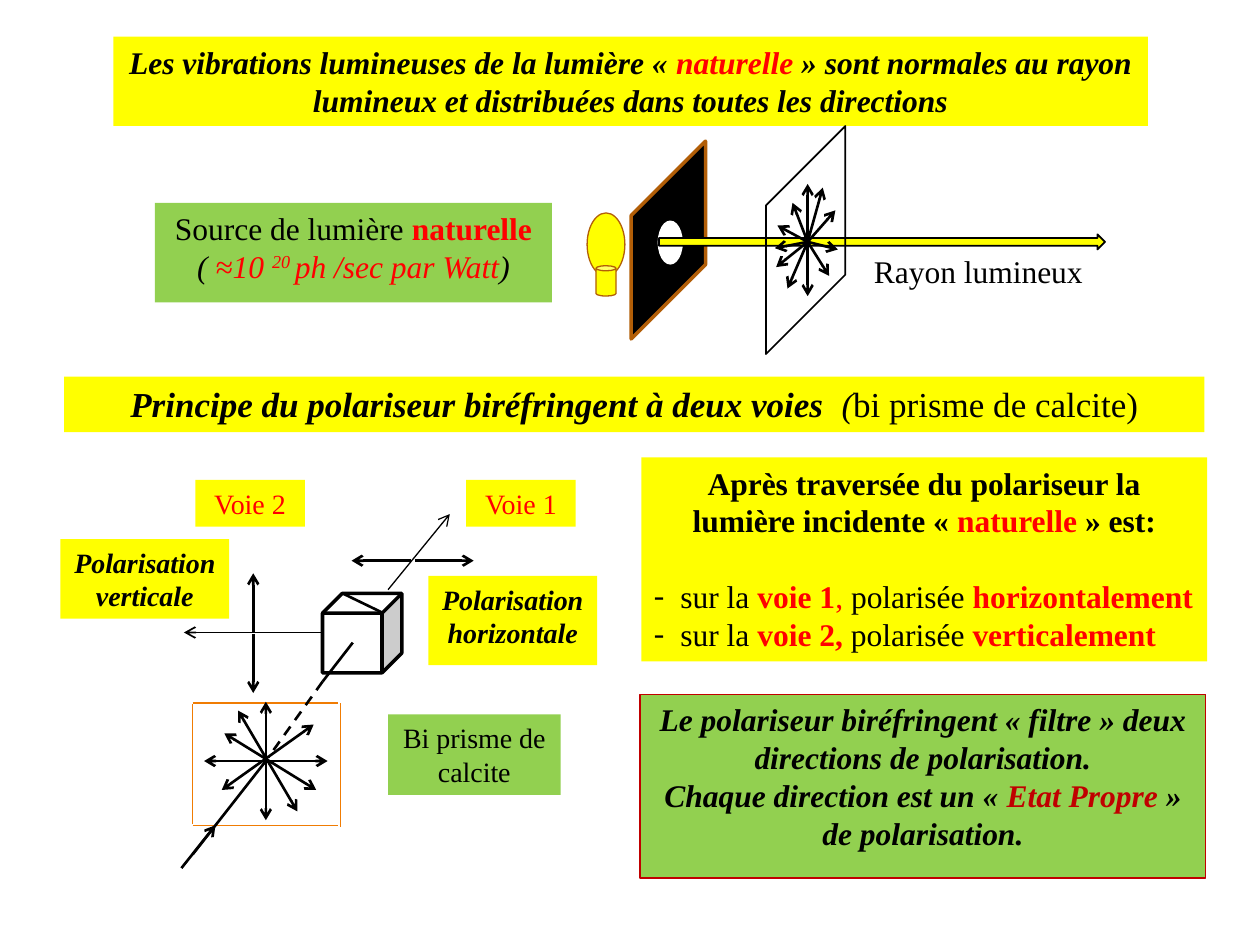
from lxml import etree
from pptx import Presentation
from pptx.dml.color import RGBColor
from pptx.enum import dml, shapes, text
from pptx.oxml import ns
from pptx.util import Inches, Pt

FONT = "Times New Roman"
COLORS = {"black": "000000", "white": "FFFFFF", "yellow": "FFFF00", "green": "92D050",
          "red": "FF0000", "crimson": "C00000", "brown": "B25E07", "orange": "F07C03"}
KIND = shapes.MSO_SHAPE

# Run styles: b bold, i italic, r red, c crimson, s superscript
HEADING = [[("Les vibrations lumineuses de la lumière « ", "bi"), ("naturelle", "bir"),
            (" » sont normales au rayon lumineux et distribuées dans toutes les directions", "bi")]]
RESULT = [[("Après traversée du polariseur la lumière incidente « ", "b"),
           ("naturelle", "br"), (" » est:", "b")]]
CHANNELS = [
    [("sur la ", ""), ("voie 1", "br"), (",", "r"), (" polarisée ", ""), ("horizontalement", "br")],
    [("sur la ", ""), ("voie 2,", "br"), (" polarisée ", ""), ("verticalement", "br")],
]
LABELS = [
    ((6.82, 1.95, 1.89, 0.4), None, None, 18, [[("Rayon lumineux", "")]]),
    ((1.23, 1.61, 3.15, 0.79), "green", None, 18, [
        [("Source de lumière ", ""), ("naturelle", "br")],
        [("( ", "i"), ("≈10 ", "ir"), ("20 ", "irs"), ("ph /sec par Watt", "ir"), (")", "i")]]),
    ((5.08, 5.51, 4.49, 1.46), "green", "crimson", 18, [
        [("Le polariseur biréfringent « filtre » deux directions de polarisation.", "bi")],
        [("Chaque direction est un « ", "bi"), ("Etat Propre", "bic"),
         (" » de polarisation.", "bi")]]),
    ((0.51, 2.99, 9.05, 0.44), "yellow", None, 20, [
        [("Principe du polariseur biréfringent à deux voies  ", "bi"), ("(", "i"),
         ("bi prisme de calcite)", "")]]),
    ((3.7, 3.81, 0.87, 0.37), "yellow", None, 16, [[("Voie 1", "r")]]),
    ((1.55, 3.81, 0.87, 0.37), "yellow", None, 16, [[("Voie 2", "r")]]),
    ((3.4, 4.57, 1.34, 0.71), "yellow", None, 16, [[("Polarisation horizontale", "bi")]]),
    ((0.48, 4.28, 1.34, 0.63), "yellow", None, 16, [[("Polarisation verticale", "bi")]]),
    ((3.08, 5.67, 1.37, 0.64), "green", None, 16, [[("Bi prisme de calcite", "")]]),
]
SCREEN = (4.52, 1.61, 1.57, 0.59)
HOLE = (5.22, 1.75, 0.2, 0.35)
BEAM = (5.23, 1.86, 3.54, 0.12)
WAVE_PLANE = (5.49, 1.59, 1.81, 0.63)
BULB = (4.66, 1.69, 0.3, 0.5)
SOCKET = (4.73, 2.11, 0.16, 0.24)
PRISM = (2.56, 4.71, 0.63, 0.63)

RAY_CENTER = (6.41, 1.92)
RAY_TIPS = [(6.41, 1.46), (6.41, 2.35), (6.53, 1.49), (6.29, 1.61), (6.63, 1.67), (6.16, 2.12),
            (6.58, 2.19), (6.65, 1.98), (6.17, 1.79), (6.25, 2.29), (6.15, 1.97)]
INCIDENT_CENTER = (2.11, 6.04)
INCIDENT_TIPS = [(2.11, 5.57), (1.62, 6.04), (2.6, 6.04), (2.11, 6.51)]
INCIDENT_DIAGONALS = [((1.78, 5.82), (2.51, 6.27)), ((1.76, 6.27), (2.49, 5.75)),
                      ((1.89, 5.64), (2.36, 6.44))]
VERTICAL_VIBRATION = [((2.01, 5.02), (2.01, 4.55)), ((2.01, 5.03), (2.01, 5.5))]
HORIZONTAL_VIBRATION = [((3.26, 4.45), (2.79, 4.45)), ((3.29, 4.45), (3.76, 4.45))]
FRAME_SIDES = [((1.53, 6.55), (2.68, 6.55)), ((1.53, 5.58), (2.68, 5.58)),
               ((1.53, 5.59), (1.53, 6.54)), ((2.7, 5.58), (2.7, 6.56))]
PRISM_DIAGONAL = ((2.72, 4.71), (3.03, 4.86))
INCIDENT_PATH = [((2.8, 5.1), (2.56, 5.41)), ((2.11, 6.04), (1.53, 6.78))]
HIDDEN_PATH = ((2.56, 5.41), (2.13, 6.01))
ENTRY = ((1.44, 6.89), (1.71, 6.55))
CHANNEL_1 = ((3.08, 4.68), (3.57, 4.08))
CHANNEL_2 = ((2.56, 5.02), (1.46, 5.02))


def rgb(name):
    return RGBColor.from_string(COLORS[name])


def paint(item, fill, line=None, width=0.75):
    if fill:
        item.fill.solid()
        item.fill.fore_color.rgb = rgb(fill)
    else:
        item.fill.background()
    if line:
        item.line.color.rgb = rgb(line)
        item.line.width = Pt(width)
    else:
        item.line.fill.background()


def place(item, box):
    item.left, item.top, item.width, item.height = map(Inches, box)


def write(item, paragraphs, size):
    frame = item.text_frame
    frame.word_wrap = True
    frame.auto_size = text.MSO_AUTO_SIZE.NONE
    frame.vertical_anchor = text.MSO_ANCHOR.TOP
    for index, runs in enumerate(paragraphs):
        paragraph = frame.add_paragraph() if index else frame.paragraphs[0]
        paragraph.alignment = text.PP_ALIGN.CENTER
        paragraph.space_before = Pt(0)
        for words, style in runs:
            run = paragraph.add_run()
            run.text = words
            font = run.font
            font.name, font.size = FONT, Pt(size)
            font.bold, font.italic = "b" in style, "i" in style
            font.color.rgb = rgb("red" if "r" in style else "crimson" if "c" in style else "black")
            if "s" in style:
                run._r.get_or_add_rPr().set("baseline", "30000")
    return frame.paragraphs


def set_bullet(paragraph, char, indent):
    properties = paragraph._p.get_or_add_pPr()
    properties.set("marL", str(indent))
    properties.set("indent", str(-indent))
    if char is None:
        etree.SubElement(properties, ns.qn("a:buNone"))
    else:
        etree.SubElement(properties, ns.qn("a:buFont")).set("typeface", FONT)
        etree.SubElement(properties, ns.qn("a:buChar")).set("char", char)


def add_figure(slide, kind, box, fill, line=None, width=0.75):
    figure = slide.shapes.add_shape(kind, *map(Inches, box))
    figure.shadow.inherit = False
    paint(figure, fill, line, width)
    return figure


def add_slanted_plane(slide, box, fill, line, width):
    plane = add_figure(slide, KIND.PARALLELOGRAM, box, fill, line, width)
    plane.adjustments[0] = 1
    plane.rotation = 90
    plane._element.spPr.find(ns.qn("a:xfrm")).set("flipH", "1")


def add_line(slide, ends, width=1.5, color="black", arrows=(), dashed=False):
    start, end = ends
    line = slide.shapes.add_connector(shapes.MSO_CONNECTOR.STRAIGHT, *map(Inches, start + end))
    line.line.color.rgb = rgb(color)
    line.line.width = Pt(width)
    if dashed:
        line.line.dash_style = dml.MSO_LINE.DASH
    for arrow in arrows:
        etree.SubElement(line.line._get_or_add_ln(), ns.qn(f"a:{arrow}")).set("type", "arrow")
    etree.SubElement(line._element.spPr, ns.qn("a:effectLst"))


def add_star(slide, center, tips):
    for tip in tips:
        add_line(slide, (center, tip), arrows=["tailEnd"])


def main():
    deck = Presentation()
    deck.slide_width, deck.slide_height = Inches(10), Inches(7.5)
    slide = deck.slides.add_slide(deck.slide_layouts[1])

    heading = slide.shapes.title
    place(heading, (0.9, 0.29, 8.21, 0.71))
    paint(heading, "yellow")
    write(heading, HEADING, 18)

    result = slide.placeholders[1]
    place(result, (5.09, 3.63, 4.49, 1.62))
    paint(result, "yellow")
    statement, *channels = write(result, RESULT + CHANNELS, 18)
    set_bullet(statement, None, 0)
    channels[0].space_before = Pt(21.5)
    for channel in channels:
        channel.alignment = text.PP_ALIGN.LEFT
        set_bullet(channel, "-", Inches(0.21))

    add_slanted_plane(slide, SCREEN, "black", "brown", 2)
    add_figure(slide, KIND.OVAL, HOLE, "white")
    add_figure(slide, KIND.RIGHT_ARROW, BEAM, "yellow", "black", 1)
    add_slanted_plane(slide, WAVE_PLANE, None, "black", 1)
    add_star(slide, RAY_CENTER, RAY_TIPS)
    add_figure(slide, KIND.OVAL, BULB, "yellow", "brown")
    add_figure(slide, KIND.CAN, SOCKET, "yellow", "brown")

    add_figure(slide, KIND.CUBE, PRISM, "white", "black", 2)
    add_line(slide, PRISM_DIAGONAL)
    add_line(slide, CHANNEL_1, 0.75, arrows=["tailEnd"])
    add_line(slide, CHANNEL_2, 1, arrows=["tailEnd"])
    for vibration in VERTICAL_VIBRATION + HORIZONTAL_VIBRATION + [ENTRY]:
        add_line(slide, vibration, arrows=["tailEnd"])
    for side in FRAME_SIDES:
        add_line(slide, side, 0.75, "orange")
    for segment in INCIDENT_PATH:
        add_line(slide, segment)
    add_line(slide, HIDDEN_PATH, dashed=True)
    add_star(slide, INCIDENT_CENTER, INCIDENT_TIPS)
    for diagonal in INCIDENT_DIAGONALS:
        add_line(slide, diagonal, arrows=["headEnd", "tailEnd"])

    for box, fill, line, size, paragraphs in LABELS:
        label = slide.shapes.add_textbox(*map(Inches, box))
        paint(label, fill, line)
        write(label, paragraphs, size)

    deck.save("out.pptx")


if __name__ == "__main__":
    main()
